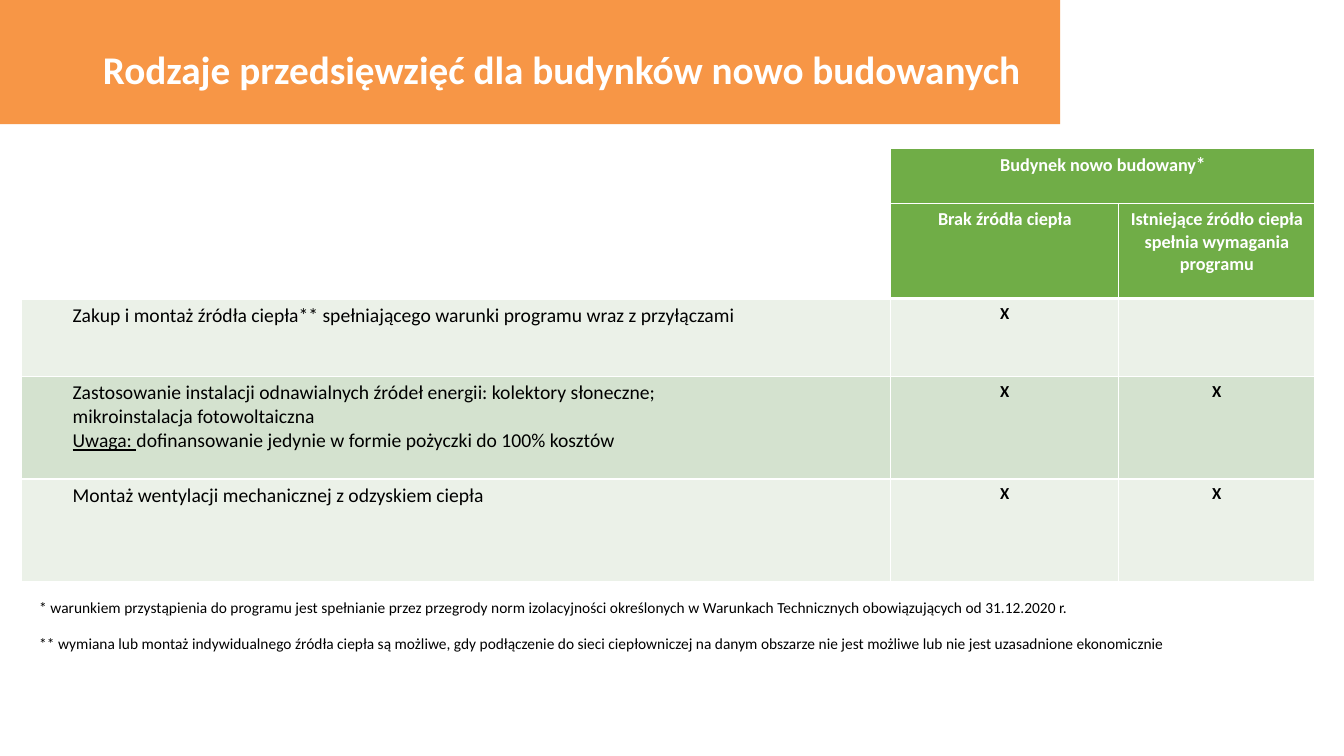
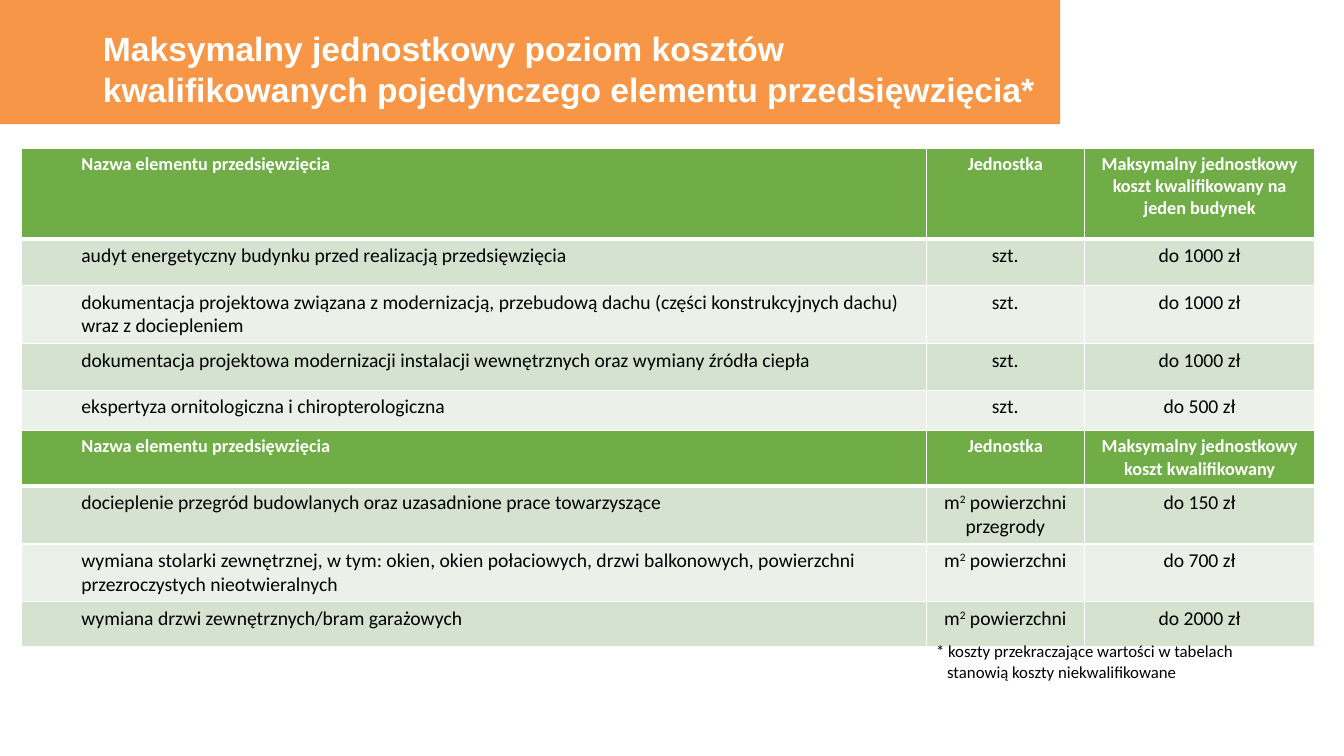
"""Two slides on eligible building measures and their maximum unit costs."""
from dataclasses import dataclass
from typing import Any, NamedTuple, Union

from lxml import etree
from pptx import Presentation
from pptx import util as u
from pptx.dml.color import RGBColor
from pptx.enum import shapes, text
from pptx.oxml import ns

Cm, Pt = u.Cm, u.Pt
ALIGN, ANCHOR = text.PP_ALIGN, text.MSO_ANCHOR


@dataclass(frozen=True)
class Theme:
    """Colours, fonts and type sizes of the presentation."""
    orange: str = "F79646"
    green: str = "70AD47"
    dark: str = "D4E2CF"
    light: str = "EBF1E8"
    white: str = "FFFFFF"
    black: str = "000000"
    font: str = "Calibri"
    title_alt: str = "Arial"
    title: int = 28
    title_long: int = 24
    head: int = 13
    body: int = 14
    mark: int = 12
    note: int = 12
    note_small: int = 11
    rule: float = 0.96
    head_rule: float = 3


T = Theme()


class Span(NamedTuple):
    """A stretch of text with its own look."""
    text: str
    size: int = 0
    underline: bool = False
    raised: bool = False


Content = Union[str, tuple[Span, ...]]


class Box(NamedTuple):
    """Position and size in centimetres."""
    left: float
    top: float
    width: float
    height: float

    def lengths(self) -> list[u.Length]:
        """Return the four values as lengths."""
        return [Cm(v) for v in self]


@dataclass(frozen=True)
class Grid:
    """A table with header rows and banded body rows."""
    top: float
    cols: tuple[float, ...]
    heights: tuple[float, ...]
    rows: tuple[tuple[Content, ...], ...]
    indent: float = 1.52
    heads: int = 1
    bands: tuple[str, str] = (T.dark, T.light)
    value_size: int = T.body
    value_bold: bool = False
    merges: tuple[tuple[int, int, int, int], ...] = ()
    left: float = 0.53


def style(font: Any, color: str, **fmt: Any) -> None:
    """Apply format values and a colour to a font."""
    for name, value in fmt.items():
        setattr(font, name, value)
    font.color.rgb = RGBColor.from_string(color)


def write(tf: Any, content: Content, size: int, color: str, bold: bool = False,
          align: Any = ALIGN.LEFT, face: str = T.font) -> None:
    """Fill a text frame; a line feed starts a paragraph, a vertical tab a line."""
    spans = (Span(content),) if isinstance(content, str) else content
    p = tf.paragraphs[0]
    p.alignment = align
    for span in spans:
        for i, block in enumerate(span.text.split("\n")):
            if i:
                p = tf.add_paragraph()
                p.alignment = align
            for j, line in enumerate(block.split("\v")):
                if j:
                    p.add_line_break()
                if not line:
                    continue
                r = p.add_run()
                r.text = line
                style(r.font, color, name=face, size=Pt(span.size or size),
                      bold=bold, underline=span.underline)
                if span.raised:
                    r._r.get_or_add_rPr().set("baseline", "30000")


def border(cell: Any, top: float, bottom: float) -> None:
    """Draw white rules on the four sides of a cell."""
    tc_pr = cell._tc.get_or_add_tcPr()
    for side, width in zip("LRTB", (T.rule, T.rule, top, bottom)):
        ln = etree.SubElement(tc_pr, ns.qn(f"a:ln{side}"), w=str(Pt(width)))
        fill = etree.SubElement(ln, ns.qn("a:solidFill"))
        etree.SubElement(fill, ns.qn("a:srgbClr"), val=T.white)


def add_grid(slide: Any, g: Grid) -> None:
    """Draw a table."""
    box = Box(g.left, g.top, sum(g.cols), sum(g.heights))
    tbl = slide.shapes.add_table(len(g.rows), len(g.cols), *box.lengths()).table
    tbl.horz_banding = False
    for col, width in zip(tbl.columns, g.cols):
        col.width = Cm(width)
    for i, (row, height, contents) in enumerate(zip(tbl.rows, g.heights, g.rows)):
        row.height = Cm(height)
        is_head = i < g.heads
        for j, (cell, content) in enumerate(zip(row.cells, contents)):
            border(cell, T.head_rule if i == g.heads else T.rule,
                   T.head_rule if i == g.heads - 1 else T.rule)
            if is_head and j == 0 and not content:
                cell.fill.background()
            else:
                cell.fill.solid()
                fill = T.green if is_head else g.bands[(i - g.heads) % 2]
                cell.fill.fore_color.rgb = RGBColor.from_string(fill)
            if j == 0:
                cell.margin_left = Cm(g.indent)
            size = T.head if is_head else g.value_size if j else T.body
            write(cell.text_frame, content, size, T.white if is_head else T.black,
                  is_head or (j > 0 and g.value_bold),
                  ALIGN.CENTER if j else ALIGN.LEFT)
    for r1, c1, r2, c2 in g.merges:
        tbl.cell(r1, c1).merge(tbl.cell(r2, c2))


def add_note(slide: Any, box: Box, content: str, size: int) -> Any:
    """Draw a footnote and return its text frame."""
    tf = slide.shapes.add_textbox(*box.lengths()).text_frame
    tf.word_wrap = True
    write(tf, content, size, T.black)
    return tf


def add_band(slide: Any, layout: Any) -> None:
    """Place the title band on the layout."""
    sp = slide.shapes.add_shape(shapes.MSO_SHAPE.RECTANGLE,
                                *Box(0, 0, 26.72, 3.13).lengths())
    sp.shadow.inherit = False
    sp.fill.solid()
    sp.fill.fore_color.rgb = RGBColor.from_string(T.orange)
    sp.line.fill.background()
    layout.shapes.element.insert(2, sp.element)


def add_slide(prs: Any, title: str, size: int, face: str, width: float) -> Any:
    """Add a title-only slide and format its title."""
    slide = prs.slides.add_slide(prs.slide_layouts[5])
    sp = slide.shapes.title
    box = Box(2.34, 0.53, width, 2.39).lengths()
    for name, value in zip(Box._fields, box):
        setattr(sp, name, value)
    fmt = {"word_wrap": True, "auto_size": text.MSO_AUTO_SIZE.NONE,
           "vertical_anchor": ANCHOR.MIDDLE}
    for name, value in fmt.items():
        setattr(sp.text_frame, name, value)
    write(sp.text_frame, title, size, T.white, True, face=face)
    return slide


def square_metres(rest: str) -> tuple[Span, ...]:
    """Return a unit starting with square metres."""
    return Span("m"), Span("2", raised=True), Span(f" {rest}")


MEASURES = Grid(
    top=3.73, cols=(21.92, 5.74, 4.95), heights=(1.4, 2.39, 1.96, 2.59, 2.59),
    indent=1.3, heads=2, bands=(T.light, T.dark), value_size=T.mark, value_bold=True,
    merges=((0, 0, 1, 0), (0, 1, 0, 2)),
    rows=(
        ("", (Span("Budynek nowo budowany"), Span("*", size=T.body)), ""),
        ("", "Brak źródła ciepła",
         "Istniejące źródło ciepła spełnia wymagania programu"),
        ("Zakup i montaż źródła ciepła** spełniającego warunki programu "
         "wraz z przyłączami", "X", ""),
        ((Span("Zastosowanie instalacji odnawialnych źródeł energii: kolektory "
               "słoneczne;\nmikroinstalacja fotowoltaiczna\v"),
          Span("Uwaga: ", underline=True),
          Span("dofinansowanie jedynie w formie pożyczki do 100% kosztów")),
         "X", "X"),
        ("Montaż wentylacji mechanicznej z odzyskiem ciepła", "X", "X"),
    ))

COST_COLS = (22.81, 3.99, 5.8)
COST_HEAD = ("Nazwa elementu przedsięwzięcia", "Jednostka")

DOCUMENT_COSTS = Grid(
    top=3.73, cols=COST_COLS, heights=(2.29, 1.17, 1.47, 1.17, 1.17),
    rows=(
        (*COST_HEAD, "Maksymalny jednostkowy koszt kwalifikowany na jeden budynek"),
        ("audyt energetyczny budynku przed realizacją przedsięwzięcia",
         "szt.", "do 1000 zł"),
        ("dokumentacja projektowa związana z modernizacją, przebudową dachu "
         "(części konstrukcyjnych dachu)\vwraz z dociepleniem",
         "szt.", "do 1000 zł"),
        ("dokumentacja projektowa modernizacji instalacji wewnętrznych oraz "
         "wymiany źródła ciepła", "szt.", "do 1000 zł"),
        ("ekspertyza ornitologiczna i chiropterologiczna", "szt.", "do 500 zł"),
    ))

WORK_COSTS = Grid(
    top=10.85, cols=COST_COLS, heights=(1.4, 1.14, 1.4, 1.14),
    rows=(
        (*COST_HEAD, "Maksymalny jednostkowy koszt kwalifikowany"),
        ("docieplenie przegród budowlanych oraz uzasadnione prace towarzyszące",
         square_metres("powierzchni przegrody"), "do 150 zł"),
        ("wymiana stolarki zewnętrznej, w tym: okien, okien połaciowych, drzwi "
         "balkonowych, powierzchni przezroczystych nieotwieralnych",
         square_metres("powierzchni"), "do 700 zł"),
        ("wymiana drzwi zewnętrznych/bram garażowych",
         square_metres("powierzchni"), "do 2000 zł"),
    ))


def main() -> None:
    """Build and save the presentation."""
    prs = Presentation()
    prs.slide_width, prs.slide_height = Cm(33.87), Cm(19.05)

    slide = add_slide(prs, "Rodzaje przedsięwzięć dla budynków nowo budowanych",
                      T.title, T.font, 24.41)
    add_band(slide, slide.slide_layout)
    add_grid(slide, MEASURES)
    tf = add_note(slide, Box(0.74, 14.94, 32.41, 1.65),
                  "* warunkiem przystąpienia do programu jest spełnianie przez "
                  "przegrody norm izolacyjności określonych w Warunkach Technicznych "
                  "obowiązujących od 31.12.2020 r.\n"
                  "** wymiana lub montaż indywidualnego źródła ciepła są możliwe, gdy "
                  "podłączenie do sieci ciepłowniczej na danym obszarze nie jest "
                  "możliwe lub nie jest uzasadnione ekonomicznie", T.note_small)
    tf.paragraphs[1].space_before = Pt(13)

    slide = add_slide(prs, "Maksymalny jednostkowy poziom kosztów kwalifikowanych "
                      "pojedynczego elementu przedsięwzięcia*",
                      T.title_long, T.title_alt, 24.21)
    add_grid(slide, DOCUMENT_COSTS)
    add_grid(slide, WORK_COSTS)
    tf = add_note(slide, Box(23.34, 16.03, 10.4, 1.27),
                  "* koszty przekraczające wartości w tabelach\v"
                  "stanowią koszty niekwalifikowane", T.note)
    p_pr = tf.paragraphs[0]._p.get_or_add_pPr()
    for name, value in {"marL": Cm(0.28), "indent": -Cm(0.28)}.items():
        p_pr.set(name, str(value))

    prs.save("out.pptx")


if __name__ == "__main__":
    main()
